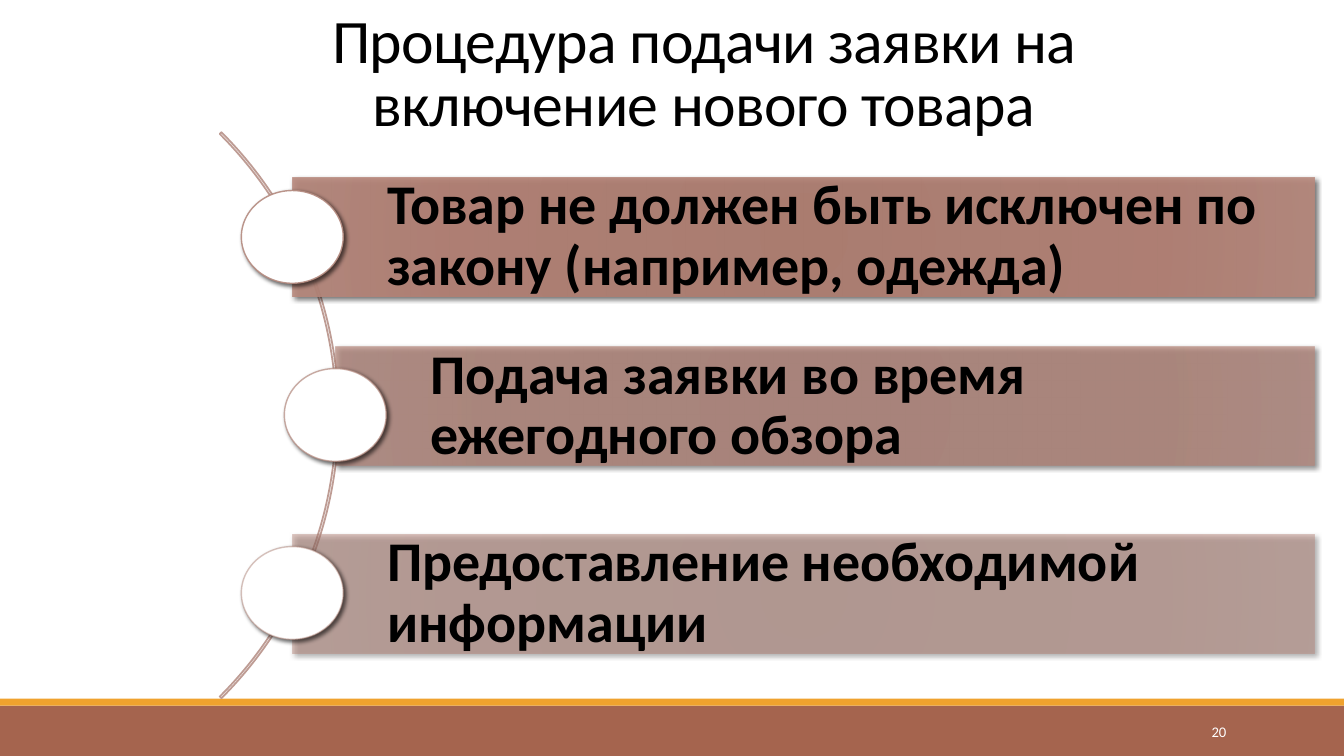
from lxml import etree
from pptx import Presentation
from pptx.dml.color import RGBColor
from pptx.enum.shapes import MSO_SHAPE
from pptx.enum.text import MSO_ANCHOR, PP_ALIGN
from pptx.oxml import parse_xml
from pptx.oxml.ns import nsdecls, qn
from pptx.util import Inches, Pt

RECT, OVAL, ARC = MSO_SHAPE.RECTANGLE, MSO_SHAPE.OVAL, MSO_SHAPE.BLOCK_ARC
LEFT, CENTER, RIGHT = PP_ALIGN.LEFT, PP_ALIGN.CENTER, PP_ALIGN.RIGHT
MIDDLE, BOTTOM = MSO_ANCHOR.MIDDLE, MSO_ANCHOR.BOTTOM

FONT = "Calibri"
COLORS = {
    "footer": "A5644E", "strip": "F0A22E", "white": "FFFFFF", "black": "000000",
    "arc": "BE9C94", "ring": "B58B80",
}
BAR_STOPS = [(0, "B07D70"), (34, "B17F72"), (70, "B48073"), (100, "B8897D")]

# Grid: 100 columns by 100 rows over the slide
SLIDE_W, SLIDE_H = Inches(13.33), Inches(7.5)
BAR_RIGHT, BAR_H = 97.8, 15.73
DOT_W, DOT_H, DOT_TOP, DOT_STEP = 7.58, 12.27, 25.2, 23.55

# Text, bar left, bar top, opacity in percent
STEPS = [
    ("Товар не должен быть исключен по закону (например, одежда)", 21.75, 23.47, 90),
    ("Подача заявки во время ежегодного обзора", 24.95, 45.87, 70),
    ("Предоставление необходимой информации", 21.75, 70.67, 50),
]


def place(x, y, w, h):
    return (int(SLIDE_W * x / 100), int(SLIDE_H * y / 100),
            int(SLIDE_W * w / 100), int(SLIDE_H * h / 100))


def rgb(name):
    return RGBColor.from_string(COLORS[name])


def add_shape(s, kind, box, fill=None, line=None, width=1):
    sp = s.shapes.add_shape(kind, *place(*box))
    sp.shadow.inherit = False
    if fill:
        sp.fill.solid()
        sp.fill.fore_color.rgb = rgb(fill)
    else:
        sp.fill.background()
    if line:
        sp.line.color.rgb = rgb(line)
        sp.line.width = Pt(width)
    else:
        sp.line.fill.background()
    return sp


def add_text(s, text, box, size, color="black", bold=False, align=LEFT,
             anchor=MIDDLE, spacing=1.0, margins=(0.1, 0.05, 0.1, 0.05)):
    tf = s.shapes.add_textbox(*place(*box)).text_frame
    tf.word_wrap = True
    tf.vertical_anchor = anchor
    tf.margin_left, tf.margin_top, tf.margin_right, tf.margin_bottom = map(Inches, margins)
    p = tf.paragraphs[0]
    p.text = text
    p.alignment = align
    p.line_spacing = spacing
    r = p.runs[0]
    r.font.name, r.font.size, r.font.bold = FONT, Pt(size), bold
    r.font.color.rgb = rgb(color)
    return r


def add_shadow(sp, blur, distance):
    effects = sp._element.spPr.find(qn("a:effectLst"))
    effects.append(parse_xml(
        f'<a:outerShdw {nsdecls("a")} blurRad="{Pt(blur)}" dist="{Pt(distance)}" '
        f'dir="2700000" algn="ctr" rotWithShape="0"><a:srgbClr val="{COLORS["black"]}">'
        '<a:alpha val="60000"/></a:srgbClr></a:outerShdw>'))


def set_radial_fill(sp, opacity):
    stops = "".join(
        f'<a:gs pos="{pos * 1000}"><a:srgbClr val="{color}">'
        f'<a:alpha val="{opacity * 1000}"/></a:srgbClr></a:gs>'
        for pos, color in BAR_STOPS)
    spPr = sp._element.spPr
    spPr.replace(spPr.find(qn("a:noFill")), parse_xml(
        f'<a:gradFill {nsdecls("a")} rotWithShape="1"><a:gsLst>{stops}</a:gsLst>'
        '<a:path path="circle"><a:fillToRect l="100000" t="100000" r="100000" '
        'b="100000"/></a:path></a:gradFill>'))


def add_step(s, index, text, left, top, opacity):
    # Bar with its text
    box = (left, top, BAR_RIGHT - left, BAR_H)
    bar = add_shape(s, RECT, box)
    set_radial_fill(bar, opacity)
    add_shadow(bar, 3.5, 2)
    add_text(s, text, box, 40, bold=True, spacing=0.9, margins=(0.94, 0.11, 0.11, 0.11))

    # Circle centred on the bar's left edge
    dot = add_shape(s, OVAL, (left - DOT_W / 2, DOT_TOP + index * DOT_STEP, DOT_W, DOT_H),
                    "white", "ring")
    ring = dot.line.fill._xPr.find(qn("a:solidFill"))[0]
    etree.SubElement(ring, qn("a:alpha")).set("val", str(opacity * 1000))
    add_shadow(dot, 3, 2)


def main():
    prs = Presentation()
    prs.slide_width, prs.slide_height = SLIDE_W, SLIDE_H
    s = prs.slides.add_slide(prs.slide_layouts[6])

    # Footer band and slide number
    add_shape(s, RECT, (0, 93.33, 100, 6.67), "footer")
    add_shape(s, RECT, (0, 92.4, 100, 0.93), "strip")
    add_text(s, "20", (81.25, 94.13, 10.73, 5.33), 10.5, "white", align=RIGHT)

    # Title
    title = add_text(s, "Процедура подачи заявки на включение нового товара",
                     (16.5, 4.53, 71.72, 14.53), 44.1, align=CENTER,
                     anchor=BOTTOM, spacing=0.85)
    title.font._element.set("spc", "-50")

    # Arc behind the steps
    arc = add_shape(s, ARC, (-34.36, 2, 59.56, 105.87), line="arc", width=1.25)
    for i, value in enumerate((189, 27, 0.003)):
        arc.adjustments[i] = value

    # Steps
    for i, step in enumerate(STEPS):
        add_step(s, i, *step)

    prs.save("out.pptx")


if __name__ == "__main__":
    main()
